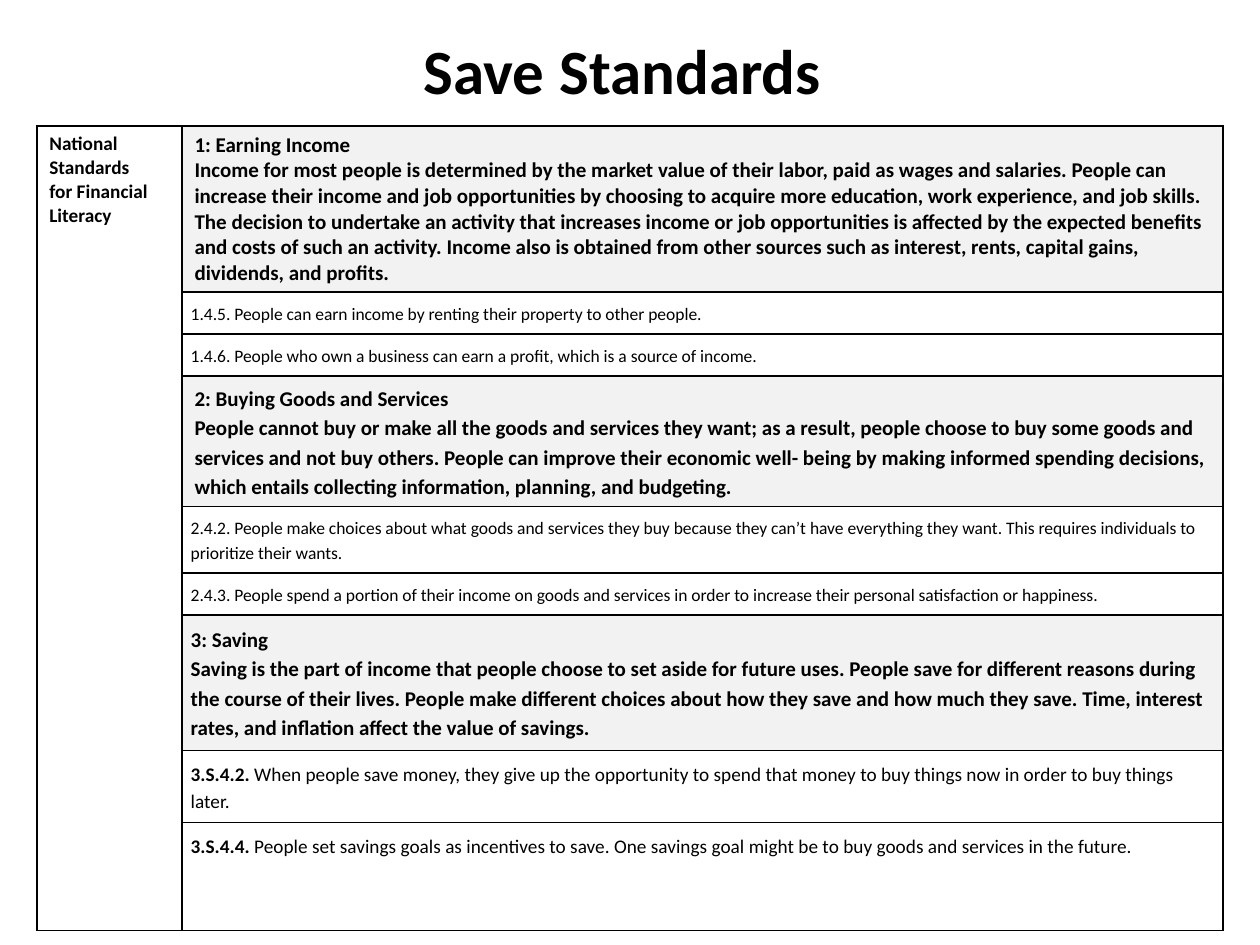
from lxml.etree import SubElement
from pptx import Presentation
from pptx.dml.color import RGBColor
from pptx.enum.text import MSO_ANCHOR, PP_ALIGN
from pptx.oxml.ns import qn
from pptx.util import Pt

BLACK = RGBColor(0x00, 0x00, 0x00)
WHITE = RGBColor(0xFF, 0xFF, 0xFF)
GRAY = RGBColor(0xF2, 0xF2, 0xF2)


def add_run(para, text, size, bold):
    run = para.add_run()
    run.text = text
    run.font.name = "Calibri"
    run.font.size = Pt(size)
    run.font.bold = bold
    run.font.color.rgb = BLACK


def style_cell(cell, fill):
    tcpr = cell._tc.get_or_add_tcPr()
    for side in ("L", "R", "T", "B"):
        line = SubElement(tcpr, qn(f"a:ln{side}"), w=str(Pt(1)))
        paint = SubElement(line, qn("a:solidFill"))
        SubElement(paint, qn("a:srgbClr"), val=str(BLACK))
    cell.fill.solid()
    cell.fill.fore_color.rgb = fill


# Each row: height, fill, margin or None, line spacing, size, paragraphs of (text, bold) runs
ROWS = [
    (94.8, GRAY, None, 1, 12, [
        [("1: Earning Income", True)],
        [("Income for most people is determined by the market value of their labor, paid as "
          "wages and salaries. People can increase their income and job opportunities by "
          "choosing to acquire more education, work experience, and job skills. The decision "
          "to undertake an activity that increases income or job opportunities is affected by "
          "the expected benefits and costs of such an activity. Income also is obtained from "
          "other sources such as interest, rents, capital gains, dividends, and profits.", True)],
    ]),
    (24, WHITE, 5, 1.15, 10, [
        [("1.4.5. People can earn income by renting their property to other people.", False)],
    ]),
    (24, WHITE, 5, 1.15, 10, [
        [("1.4.6. People who own a business can earn a profit, which is a source of income.",
          False)],
    ]),
    (74.4, GRAY, None, 1.15, 12, [
        [("2: Buying Goods and Services", True)],
        [("People cannot buy or make all the goods and services they want; as a result, people "
          "choose to buy some goods and services and not buy others. People can improve their "
          "economic well- being by making informed spending decisions, which entails collecting "
          "information, planning, and budgeting.", True)],
    ]),
    (37.7, WHITE, 5, 1.15, 10, [
        [("2.4.2. People make choices about what goods and services they buy because they can’t "
          "have everything they want. This requires individuals to prioritize their wants.",
          False)],
    ]),
    (24, WHITE, 5, 1.15, 10, [
        [("2.4.3. People spend a portion of their income on goods and services in order to "
          "increase their personal satisfaction or happiness.", False)],
    ]),
    (77.6, GRAY, 5, 1.15, 12, [
        [("3: Saving", True)],
        [("Saving is the part of income that people choose to set aside for future uses. People "
          "save for different reasons during the course of their lives. People make different "
          "choices about how they save and how much they save. Time, interest rates, and "
          "inflation affect the value of savings.", True)],
    ]),
    (41.1, WHITE, 5, 1.15, 11, [
        [("3.S.4.2.", True),
         (" When people save money, they give up the opportunity to spend that money to buy "
          "things now in order to buy things later.", False)],
    ]),
    (61.4, WHITE, 5, 1.15, 11, [
        [("3.S.4.4.", True),
         (" People set savings goals as incentives to save. One savings goal might be to buy "
          "goods and services in the future.", False)],
    ]),
]

deck = Presentation()
deck.slide_width, deck.slide_height = Pt(720), Pt(540)
slide = deck.slides.add_slide(deck.slide_layouts[5])

# Title
title = slide.shapes.title
title.left, title.top, title.width, title.height = Pt(0), Pt(-6), Pt(720), Pt(90)
title.text_frame.vertical_anchor = MSO_ANCHOR.MIDDLE
para = title.text_frame.paragraphs[0]
para.alignment = PP_ALIGN.CENTER
for text, size in (("Save", 36), (" ", 38), ("Standards", 36), (" ", 38)):
    add_run(para, text, size, True)

# Table frame
high = sum(row[0] for row in ROWS)
table = slide.shapes.add_table(len(ROWS), 2, Pt(21), Pt(72), Pt(678), Pt(high)).table
table.first_row = table.horz_banding = False
table.columns[0].width, table.columns[1].width = Pt(83), Pt(595)

# Standards, one per row
for i, (height, fill, margin, space, size, paras) in enumerate(ROWS):
    table.rows[i].height = Pt(height)
    style_cell(table.cell(i, 0), WHITE)
    cell = table.cell(i, 1)
    style_cell(cell, fill)
    if margin:
        cell.margin_left = cell.margin_right = Pt(margin)
        cell.margin_top = cell.margin_bottom = Pt(margin)
    frame = cell.text_frame
    for j, runs in enumerate(paras):
        para = frame.add_paragraph() if j else frame.paragraphs[0]
        para.line_spacing = space
        for text, bold in runs:
            add_run(para, text, size, bold)

# Heading cell down the left side
head = table.cell(0, 0)
head.merge(table.cell(len(ROWS) - 1, 0))
add_run(head.text_frame.paragraphs[0], "National Standards", 11, True)
add_run(head.text_frame.add_paragraph(), "for Financial Literacy", 11, True)

deck.save("out.pptx")
